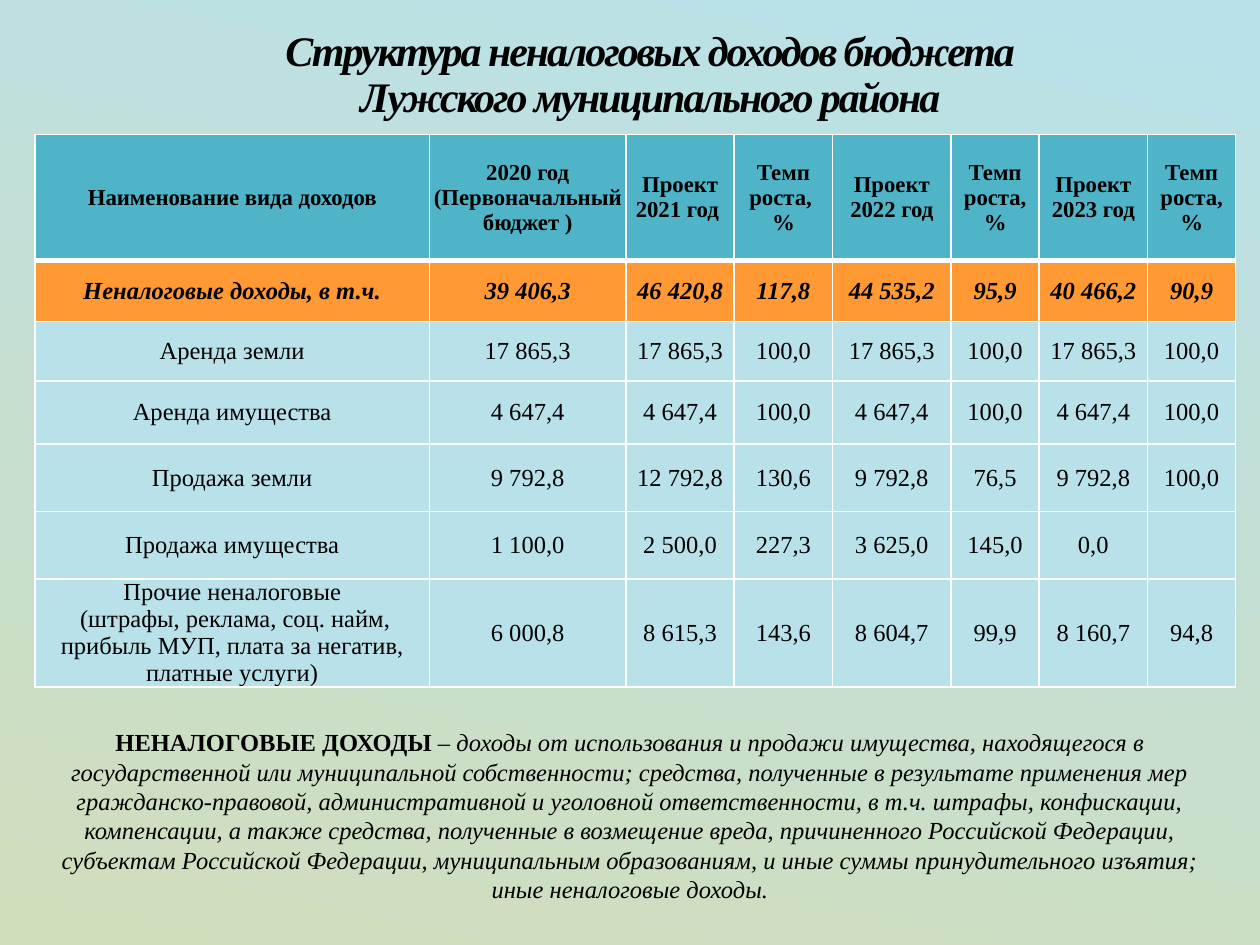
from lxml.etree import SubElement
from pptx import Presentation
from pptx.dml.color import RGBColor
from pptx.enum.shapes import MSO_SHAPE
from pptx.enum.text import MSO_ANCHOR, PP_ALIGN
from pptx.oxml.ns import qn
from pptx.util import Pt

FONT = "Times New Roman"
BLACK, WHITE = "000000", "FFFFFF"
HEADER_FILL, TOTAL_FILL, BODY_FILL = "50B4C8", "FF9933", "B9E1E9"
COLUMN_WIDTHS = [225.4, 112.3, 61.9, 56.2, 67.7, 50.4, 61.9, 50.4]
ROW_HEIGHTS = [71.7, 35, 34, 36, 38.7, 38.4, 61.7]
INCOME_ROWS = [
    ["Наименование вида доходов", "2020 год (Первоначальный бюджет )", "Проект 2021 год ",
     "Темп роста, \n%", "Проект 2022 год", "Темп роста, %", "Проект 2023 год", "Темп роста, %"],
    ["Неналоговые доходы, в т.ч.", "39 406,3", "46 420,8", "117,8", "44 535,2", "95,9", "40 466,2", "90,9"],
    ["Аренда земли", "17 865,3", "17 865,3", "100,0", "17 865,3", "100,0", "17 865,3", "100,0"],
    ["Аренда имущества", "4 647,4", "4 647,4", "100,0", "4 647,4", "100,0", "4 647,4", "100,0"],
    ["Продажа земли", "9 792,8", "12 792,8", "130,6", "9 792,8", "76,5", "9 792,8", "100,0"],
    ["Продажа имущества", "1 100,0", "2 500,0", "227,3", "3 625,0", "145,0", "0,0", ""],
    ["Прочие неналоговые\n (штрафы, реклама, соц. найм, прибыль МУП, плата за негатив, платные услуги)",
     "6 000,8", "8 615,3", "143,6", "8 604,7", "99,9", "8 160,7", "94,8"],
]
DEFINITION = (
    "доходы от использования и продажи имущества, находящегося в государственной или "
    "муниципальной собственности; средства, полученные в результате применения мер "
    "гражданско-правовой, административной и уголовной ответственности, в т.ч. штрафы, "
    "конфискации, компенсации, а также средства, полученные в возмещение вреда, причиненного "
    "Российской Федерации, субъектам Российской Федерации, муниципальным образованиям, и иные "
    "суммы принудительного изъятия; иные неналоговые доходы."
)


def color(value):
    return RGBColor.from_string(value)


def format_paragraph(paragraph, size, bold=False, italic=False):
    paragraph.alignment = PP_ALIGN.CENTER
    font = paragraph.font
    font.name, font.size = FONT, Pt(size)
    font.bold, font.italic = bold, italic
    font.color.rgb = color(BLACK)


def set_background(slide):
    fill = slide.background.fill
    fill.gradient()
    fill.gradient_angle = 258
    for stop, position, value in zip(fill.gradient_stops, (0.02, 1), ("B9E1E9", "D1DEBC")):
        stop.position = position
        stop.color.rgb = color(value)


def place_title(slide, left, top, width, height):
    title = slide.shapes.title
    title.left, title.top, title.width, title.height = Pt(left), Pt(top), Pt(width), Pt(height)
    frame = title.text_frame
    frame.text = "Структура неналоговых доходов бюджета\vЛужского муниципального района"
    frame.vertical_anchor = MSO_ANCHOR.MIDDLE
    frame.word_wrap = True
    paragraph = frame.paragraphs[0]
    format_paragraph(paragraph, 24, bold=True, italic=True)
    paragraph.line_spacing = 0.9
    for run in paragraph.runs:
        run._r.get_or_add_rPr().set("spc", "-120")


def set_borders(cell, top, bottom):
    properties = cell._tc.get_or_add_tcPr()
    for side, width in (("L", 1), ("R", 1), ("T", top), ("B", bottom)):
        line = SubElement(properties, qn(f"a:ln{side}"), w=str(Pt(width)))
        fill = SubElement(line, qn("a:solidFill"))
        SubElement(fill, qn("a:srgbClr"), val=WHITE)


def place_income_table(slide, left, top):
    frame = slide.shapes.add_table(
        len(ROW_HEIGHTS), len(COLUMN_WIDTHS), Pt(left), Pt(top),
        Pt(sum(COLUMN_WIDTHS)), Pt(sum(ROW_HEIGHTS)))
    table = frame.table
    table.horz_banding = False
    for column, width in zip(table.columns, COLUMN_WIDTHS):
        column.width = Pt(width)
    for index, (row, height, texts) in enumerate(zip(table.rows, ROW_HEIGHTS, INCOME_ROWS)):
        row.height = Pt(height)
        row_fill = {0: HEADER_FILL, 1: TOTAL_FILL}.get(index, BODY_FILL)
        for cell, text in zip(row.cells, texts):
            cell.text = text
            cell.vertical_anchor = MSO_ANCHOR.MIDDLE
            cell.margin_left = cell.margin_right = cell.margin_top = cell.margin_bottom = 0
            set_borders(cell, 3 if index == 1 else 1, 3 if index == 0 else 1)
            cell.fill.solid()
            cell.fill.fore_color.rgb = color(row_fill)
            for paragraph in cell.text_frame.paragraphs:
                format_paragraph(paragraph, 13 if index == 0 else 14, index < 2, index == 1)


def place_definition(slide, left, top, width, height):
    shape = slide.shapes.add_shape(
        MSO_SHAPE.ROUNDED_RECTANGLE, Pt(left), Pt(top), Pt(width), Pt(height))
    shape.shadow.inherit = False
    shape.fill.background()
    shape.line.fill.background()
    frame = shape.text_frame
    frame.word_wrap = True
    frame.vertical_anchor = MSO_ANCHOR.MIDDLE
    paragraph = frame.paragraphs[0]
    format_paragraph(paragraph, 14)
    for text, bold, italic in (
            ("НЕНАЛОГОВЫЕ ДОХОДЫ", True, False), (" – ", False, False), (DEFINITION, False, True)):
        run = paragraph.add_run()
        run.text = text
        run.font.bold, run.font.italic = bold, italic


def main():
    presentation = Presentation()
    presentation.slide_width, presentation.slide_height = Pt(720), Pt(540)
    slide = presentation.slides.add_slide(presentation.slide_layouts[5])
    set_background(slide)
    place_title(slide, 42.5, 9.4, 658, 67.7)
    place_income_table(slide, 20, 77)
    place_definition(slide, 20, 412, 680, 108)
    presentation.save("out.pptx")


if __name__ == "__main__":
    main()
